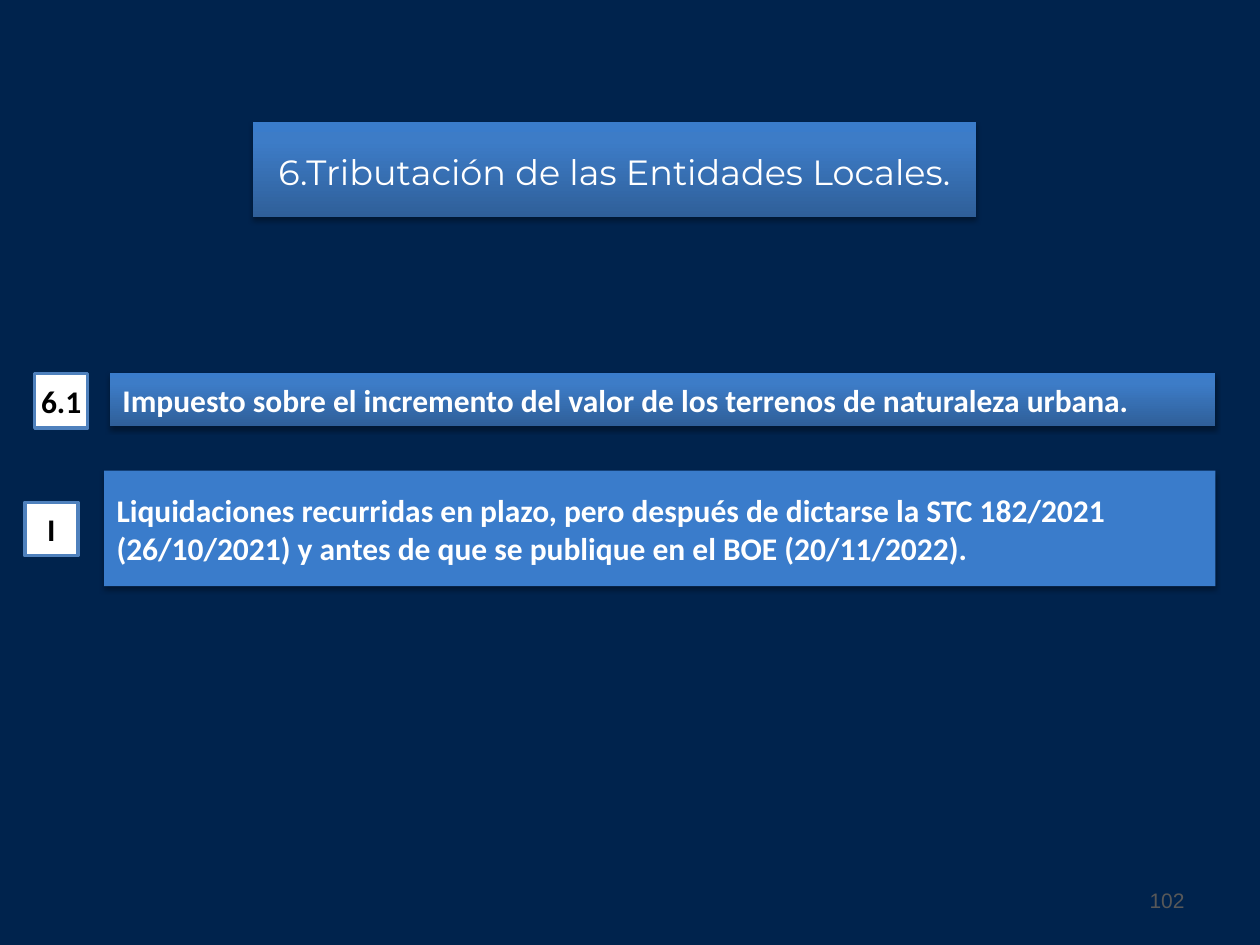
import copy

import lxml.etree
import pptx
import pptx.dml.color
import pptx.enum.shapes
import pptx.enum.text
import pptx.oxml.ns
import pptx.util

Cm = pptx.util.Cm
Pt = pptx.util.Pt
qn = pptx.oxml.ns.qn
ALIGN = pptx.enum.text.PP_ALIGN
MIDDLE = pptx.enum.text.MSO_ANCHOR.MIDDLE
RECT = pptx.enum.shapes.MSO_SHAPE.RECTANGLE

COLORS = {
    "navy": "00234D",
    "deep": "2F5F99",
    "mid": "3D7CC7",
    "bright": "3A7CCB",
    "edge": "4F81BD",
    "white": "FFFFFF",
    "black": "000000",
    "gray": "585858",
}
NO_MARGINS = {
    "margin_left": 0,
    "margin_right": 0,
    "margin_top": 0,
    "margin_bottom": 0,
}


def rgb(name):
    return pptx.dml.color.RGBColor.from_string(COLORS[name])


def apply(target, values):
    for name, value in values.items():
        setattr(target, name, value)


class SlideBuilder:
    body = {"name": "Calibri", "size": Pt(18), "bold": True}
    heading = {"name": "Montserrat", "size": Pt(20), "bold": False}
    footer = {"name": "Arial", "size": Pt(12), "bold": False}

    def __init__(self, prs):
        self.s = prs.slides.add_slide(prs.slide_layouts[6])
        fill = self.s.background.fill
        fill.solid()
        fill.fore_color.rgb = rgb("navy")

    def label(self, sp, text, font, color, paragraph, frame=None):
        tf = sp.text_frame
        apply(tf, {"word_wrap": True, "vertical_anchor": MIDDLE, **(frame or {})})
        p = tf.paragraphs[0]
        apply(p, paragraph)
        r = p.add_run()
        r.text = text
        apply(r.font, font)
        r.font.color.rgb = rgb(color)

    def rect(self, box):
        sp = self.s.shapes.add_shape(RECT, *map(Cm, box))
        sp.shadow.inherit = False
        return sp

    def badge(self, box, text):
        sp = self.rect(box)
        sp.fill.solid()
        sp.fill.fore_color.rgb = rgb("white")
        sp.line.color.rgb = rgb("edge")
        sp.line.width = Pt(2)
        self.label(sp, text, self.body, "black",
                   {"alignment": ALIGN.CENTER}, {"word_wrap": False})

    def gradient(self, sp):
        sp.fill.gradient()
        sp.fill.gradient_angle = 90
        stops = sp._element.spPr.find(qn("a:gradFill")).find(qn("a:gsLst"))
        stops.append(copy.deepcopy(stops[-1]))
        colors = (("deep", 0), ("mid", 0.8), ("bright", 1))
        for stop, (color, position) in zip(sp.fill.gradient_stops, colors):
            stop.color.rgb = rgb(color)
            stop.position = position

    def shadow(self, sp):
        effects = sp._element.spPr.find(qn("a:effectLst"))
        outer = lxml.etree.SubElement(
            effects, qn("a:outerShdw"), blurRad=str(Pt(3.1)),
            dist=str(Pt(1.8)), dir="5400000", rotWithShape="0")
        color = lxml.etree.SubElement(outer, qn("a:srgbClr"), val=COLORS["black"])
        lxml.etree.SubElement(color, qn("a:alpha"), val="35000")

    def banner(self, box, text, font, paragraph, frame=None, shaded=True):
        sp = self.rect(box)
        if shaded:
            self.gradient(sp)
        else:
            sp.fill.solid()
            sp.fill.fore_color.rgb = rgb("bright")
        sp.line.fill.background()
        self.shadow(sp)
        self.label(sp, text, font, "white", paragraph, frame)

    def page_number(self, box, text):
        sp = self.s.shapes.add_textbox(*map(Cm, box))
        self.label(sp, text, self.footer, "gray", {"alignment": ALIGN.RIGHT})


def main():
    prs = pptx.Presentation()
    apply(prs, {"slide_width": Cm(25.4), "slide_height": Cm(19.05)})
    b = SlideBuilder(prs)
    left = {"alignment": ALIGN.LEFT}

    b.page_number((18.2, 17.65, 5.93, 1.01), "102")
    b.badge((0.7, 7.53, 1.07, 1.1), "6.1")
    b.badge((0.5, 10.13, 1.07, 1.07), "I")
    b.banner((2.1, 9.49, 22.4, 2.33),
             "Liquidaciones recurridas en plazo, pero después de dictarse la "
             "STC 182/2021 (26/10/2021) y antes de que se publique en el BOE "
             "(20/11/2022).", b.body, left, shaded=False)
    b.banner((2.22, 7.52, 22.28, 1.07),
             "Impuesto sobre el incremento del valor de los terrenos de "
             "naturaleza urbana.", b.body, left)
    b.banner((5.1, 2.46, 14.58, 1.92),
             "6.Tributación de las Entidades Locales.", b.heading,
             {"alignment": ALIGN.CENTER, "line_spacing": Pt(26.6)}, NO_MARGINS)
    prs.save("out.pptx")


if __name__ == "__main__":
    main()
